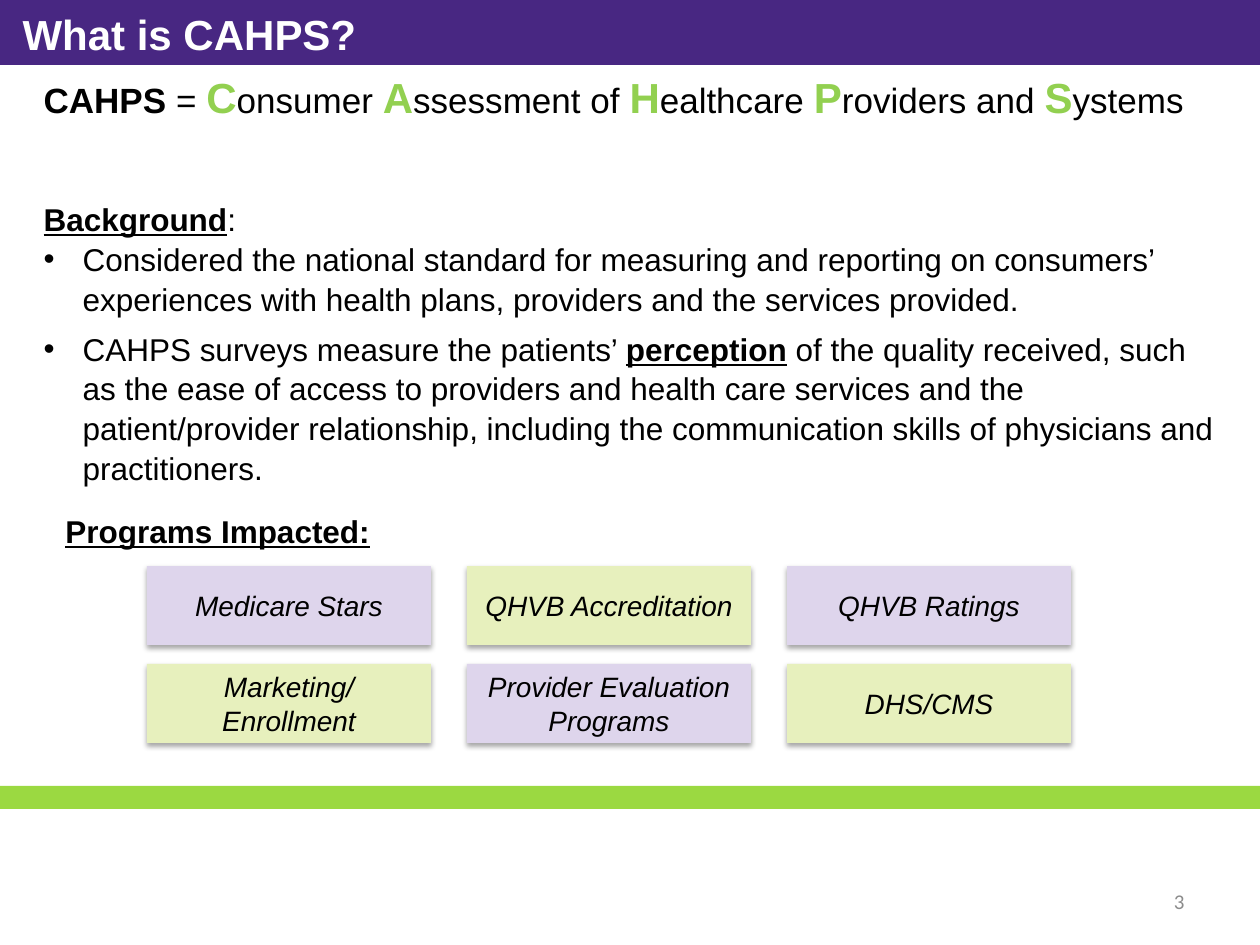
from lxml.etree import SubElement
from pptx import Presentation
from pptx.dml.color import RGBColor
from pptx.enum.shapes import MSO_SHAPE as SHAPE
from pptx.enum.text import MSO_ANCHOR as ANCHOR, MSO_AUTO_SIZE as AUTO, PP_ALIGN as ALIGN
from pptx.oxml.ns import qn
from pptx.util import Emu, Pt

PX = 914400 / 126
PURPLE, GREEN, LETTER = "482782", "9BD941", "92D050"
LILAC, LIME = "DED5EC", "E7F0BD"
BLACK, WHITE, GRAY = "000000", "FFFFFF", "8C8C8C"


def px(n):
    return Emu(round(n * PX))


def rgb(code):
    return RGBColor.from_string(code)


def place(sp, box):
    sp.left, sp.top, sp.width, sp.height = map(px, box)


def style(r, size, color=BLACK, name="Arial", bold=False, italic=False, underline=False):
    f = r.font
    f.size, f.name, f.bold, f.italic, f.underline = Pt(size), name, bold, italic, underline
    f.color.rgb = rgb(color)


def add_run(p, text, size=18, **look):
    r = p.add_run()
    r.text = text
    style(r, size, **look)


def setup(tf, anchor=ANCHOR.TOP):
    tf.word_wrap = True
    tf.auto_size = AUTO.NONE
    tf.vertical_anchor = anchor


def set_paragraph(p, before=0, after=0, align=ALIGN.LEFT, spacing=1.05):
    p.alignment, p.line_spacing = align, spacing
    p.space_before, p.space_after = Pt(before), Pt(after)


def set_bullet(p, char=None):
    pPr = p._p.get_or_add_pPr()
    indent = px(39) if char else 0
    pPr.set("marL", str(indent))
    pPr.set("indent", str(-indent))
    if char:
        SubElement(pPr, qn("a:buFont")).set("typeface", "Arial")
        SubElement(pPr, qn("a:buChar")).set("char", char)
    else:
        SubElement(pPr, qn("a:buNone"))


def add_rect(s, box, fill):
    sp = s.shapes.add_shape(SHAPE.RECTANGLE, *map(px, box))
    sp.shadow.inherit = False
    sp.fill.solid()
    sp.fill.fore_color.rgb = rgb(fill)
    sp.line.fill.background()
    return sp


def add_bars(s):
    for i, (box, fill) in enumerate([((0, 786, 1260, 23), GREEN), ((0, 0, 1260, 65), PURPLE)]):
        bar = add_rect(s, box, fill)
        s.shapes._spTree.insert(2 + i, bar._element)


def fill_title(sp, box, text):
    place(sp, box)
    tf = sp.text_frame
    setup(tf)
    tf.text = text
    p = tf.paragraphs[0]
    set_paragraph(p)
    style(p.runs[0], 24, WHITE, bold=True)


def fill_body(sp, box):
    place(sp, box)
    tf = sp.text_frame
    setup(tf)
    p = tf.paragraphs[0]
    set_paragraph(p)
    set_bullet(p)
    add_run(p, "CAHPS", 20, bold=True)
    add_run(p, " = ", 20)
    for word in ["Consumer ", "Assessment of ", "Healthcare ", "Providers and ", "Systems"]:
        add_run(p, word[0], 24, color=LETTER, bold=True)
        add_run(p, word[1:], 20)

    p = tf.add_paragraph()
    set_paragraph(p, before=43.5)
    set_bullet(p)
    add_run(p, "Background", bold=True, underline=True)
    add_run(p, ":")

    points = [
        [("Considered the national standard for measuring and reporting on consumers’ "
          "experiences with health plans, providers and the services provided.", False)],
        [("CAHPS surveys measure the patients’ ", False), ("perception", True),
         (" of the quality received, such as the ease of access to providers and health "
          "care services and the patient/provider relationship, including the "
          "communication skills of physicians and practitioners.", False)],
    ]
    for point in points:
        p = tf.add_paragraph()
        set_paragraph(p, after=6)
        set_bullet(p, "•")
        for text, strong in point:
            add_run(p, text, bold=strong, underline=strong)


def add_label(s, box, text, size, align=ALIGN.LEFT, anchor=ANCHOR.TOP, **look):
    tf = s.shapes.add_textbox(*map(px, box)).text_frame
    setup(tf, anchor)
    tf.text = text
    p = tf.paragraphs[0]
    set_paragraph(p, align=align)
    style(p.runs[0], size, **look)


def add_soft_shadow(sp):
    effects = sp._element.spPr.find(qn("a:effectLst"))
    shadow = SubElement(effects, qn("a:outerShdw"), blurRad=str(Pt(3.1)),
                        dist=str(Pt(1.8)), dir="5400000", rotWithShape="0")
    color = SubElement(shadow, qn("a:srgbClr"), val=BLACK)
    SubElement(color, qn("a:alpha"), val="35000")


def add_programs(s, box, names, cols=3):
    left, top, width, height = box
    card_w, card_h = 284, 79
    step_x, step_y = (width - card_w) / (cols - 1), height - card_h
    for i, name in enumerate(names):
        row, col = divmod(i, cols)
        card = add_rect(s, (left + col * step_x, top + row * step_y, card_w, card_h),
                        LIME if i % 2 else LILAC)
        add_soft_shadow(card)
        tf = card.text_frame
        setup(tf, ANCHOR.MIDDLE)
        tf.text = name
        p = tf.paragraphs[0]
        set_paragraph(p, align=ALIGN.CENTER, spacing=1)
        for r in p.runs:
            style(r, 16, italic=True)


def main():
    prs = Presentation()
    prs.slide_width, prs.slide_height = px(1260), px(945)
    s = prs.slides.add_slide(prs.slide_layouts[1])
    add_bars(s)
    fill_title(s.shapes.title, (10, 0, 1050, 63), "What is CAHPS?")
    fill_body(s.placeholders[1], (31, 63, 1207, 418))
    add_programs(s, (147, 566, 924, 177),
                 ["Medicare Stars", "QHVB Accreditation", "QHVB Ratings",
                  "Marketing/\vEnrollment", "Provider Evaluation Programs", "DHS/CMS"])
    add_label(s, (53, 504, 420, 50), "Programs Impacted:", 18, bold=True, underline=True)
    add_label(s, (903, 876, 294, 50), "3", 12, ALIGN.RIGHT, ANCHOR.MIDDLE,
              color=GRAY, name="Calibri")
    prs.save("out.pptx")


if __name__ == "__main__":
    main()
